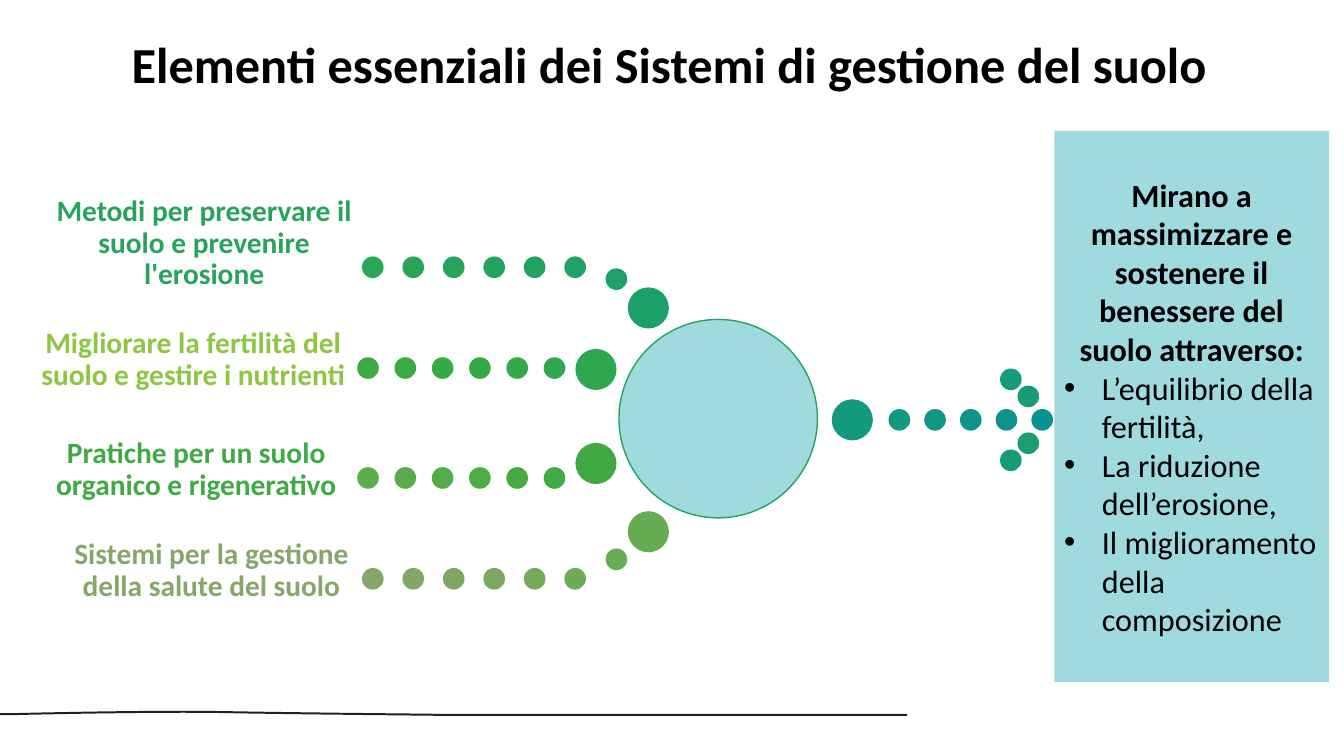
from pptx import Presentation
from pptx.dml.color import RGBColor
from pptx.enum.shapes import MSO_SHAPE
from pptx.enum.text import MSO_ANCHOR, MSO_AUTO_SIZE, PP_ALIGN
from pptx.oxml.ns import qn
from pptx.util import Cm, Pt
from lxml import etree

OVAL, RECT = MSO_SHAPE.OVAL, MSO_SHAPE.RECTANGLE
CENTER, LEFT = PP_ALIGN.CENTER, PP_ALIGN.LEFT
MIDDLE, BOTTOM = MSO_ANCHOR.MIDDLE, MSO_ANCHOR.BOTTOM
FIT_SHAPE = MSO_AUTO_SIZE.SHAPE_TO_FIT_TEXT

FONT = "Calibri"
BLACK, AQUA, GREEN, INK = "000000", "9FDADF", "26A45B", "231F20"
DOT, BIG = 0.51, 1.0

BRANCHES = [
    ((1.27, 6.48, 15.57, 0.51), 7.75, "Metodi per preservare il suolo e prevenire l'erosione",
     "26A45B", 1.02, 7.7, 0.78, 0.3,
     "2AA657 28A558 26A45B 24A35F 23A261 21A165 1EA168 1CA06A"),
    ((0.97, 9.02, 14.55, 0.51), 7.8, "Migliorare la fertilità del suolo e gestire i nutrienti",
     "8DC641", 0.94, 6.5, -0.21, None,
     "3DAA44 3BA946 37AA48 35A94A 33A84C 31A74F 2FA751"),
    ((1.35, 11.79, 14.17, 0.51), 7.19, "Pratiche per un suolo organico e rigenerativo",
     "3DAA44", 0.94, 6.5, -0.61, None,
     "5FAB4F 59AB4D 53AC49 4EAC46 47AB44 42AB43 3FAA44"),
    ((1.85, 14.33, 14.99, 0.51), 6.96, "Sistemi per la gestione della salute del suolo",
     "86A66B", 1.02, 7.7, -1.43, -0.49,
     "86A66B 81A767 7EA764 79A861 75AA5C 6EAB58 6AAB55 65AC52"),
]
ARROW_ROW = ["119881", "0F9685", "0E9588", "0D938B", "0A938E"]
ARROW_HEAD = [(4.24, -1.02, "139B7C"), (4.24, 1.02, "169B78"),
              (4.68, -0.59, "189C74"), (4.68, 0.59, "199D71")]
AIMS = ["L’equilibrio della fertilità,", "La riduzione dell’erosione,",
        "Il miglioramento della composizione"]


def rgb(value):
    return RGBColor.from_string(value)


def lengths(*values):
    return [Cm(v) for v in values]


def add_run(p, text, size, color, bold=False):
    r = p.add_run()
    r.text = text
    r.font.name = FONT
    r.font.size = Pt(size)
    r.font.bold = bold
    r.font.color.rgb = rgb(color)


def add_bullet(p):
    pPr = p._p.get_or_add_pPr()
    pPr.set("marL", str(Cm(0.95)))
    pPr.set("indent", str(Cm(-0.95)))
    color = etree.SubElement(pPr, qn("a:buClr"))
    etree.SubElement(color, qn("a:srgbClr")).set("val", BLACK)
    etree.SubElement(pPr, qn("a:buFont")).set("typeface", "Arial")
    etree.SubElement(pPr, qn("a:buChar")).set("char", "•")


def add_circle(s, x, y, d, fill, line=None):
    sp = s.shapes.add_shape(OVAL, *lengths(x, y, d, d))
    sp.shadow.inherit = False
    sp.fill.solid()
    sp.fill.fore_color.rgb = rgb(fill)
    sp.line.color.rgb = rgb(line or fill)
    sp.line.width = Pt(1)


def add_title(s, box):
    sp = s.shapes.add_textbox(*lengths(*box))
    tf = sp.text_frame
    tf.word_wrap = True
    tf.auto_size = FIT_SHAPE
    p = tf.paragraphs[0]
    p.alignment = CENTER
    add_run(p, "Elementi essenziali dei Sistemi di gestione del suolo", 36, BLACK, True)


def add_branch(s, box, label_w, label, color, pitch, reach, big_dy, bend_dy, shades):
    x, y, w, h = box
    right = x + w
    *small, last = shades.split()
    for i, shade in enumerate(small[:6]):
        add_circle(s, right - reach + i * pitch, y, h, shade)
    if bend_dy is not None:
        add_circle(s, right - 1.56, y + bend_dy, h, small[6])
    add_circle(s, right - BIG, y + big_dy, BIG, last)
    sp = s.shapes.add_textbox(*lengths(x, y - 0.38, label_w, 1.24))
    tf = sp.text_frame
    tf.word_wrap = True
    tf.vertical_anchor = BOTTOM
    tf.margin_left = tf.margin_right = tf.margin_top = tf.margin_bottom = 0
    p = tf.paragraphs[0]
    p.alignment = CENTER
    p.line_spacing = 0.9
    add_run(p, label, 21, color, True)


def add_dotted_arrow(s, box):
    x, y, w, h = box
    top = y + (h - DOT) / 2
    add_circle(s, x, y + (h - BIG) / 2, BIG, "12997E")
    for i, shade in enumerate(ARROW_ROW):
        add_circle(s, x + w - DOT - (len(ARROW_ROW) - 1 - i) * 0.9, top, DOT, shade)
    for dx, dy, shade in ARROW_HEAD:
        add_circle(s, x + dx, top + dy, DOT, shade)


def add_aims_panel(s, box):
    sp = s.shapes.add_shape(RECT, *lengths(*box))
    sp.shadow.inherit = False
    sp.fill.solid()
    sp.fill.fore_color.rgb = rgb(AQUA)
    sp.line.fill.background()
    tf = sp.text_frame
    tf.word_wrap = True
    tf.vertical_anchor = MIDDLE
    p = tf.paragraphs[0]
    p.alignment = CENTER
    add_run(p, "Mirano a massimizzare e sostenere il benessere del suolo attraverso:", 23, BLACK, True)
    for aim in AIMS:
        p = tf.add_paragraph()
        p.alignment = LEFT
        add_bullet(p)
        add_run(p, aim, 23, BLACK)


def bezier(a, b, c, d, steps=16):
    for i in range(1, steps + 1):
        t = i / steps
        u = 1 - t
        yield tuple(u**3 * k + 3 * u * u * t * m + 3 * u * t * t * n + t**3 * q
                    for k, m, n, q in zip(a, b, c, d))


def add_footer_wave(s, box):
    x, y, w, h = box
    thick = 0.05
    base = h - thick
    start, crest, flat = (0.36, 0.06), (5.66, 0.01), (11.25, base)
    curve = [(0, 0.06), start]
    curve += bezier(start, (1.32, 0.04), (3.94, -0.02), crest)
    curve += bezier(crest, (7.14, 0.04), (11.2, base), flat)
    curve.append((w, base))
    outline = curve + [(px, py + thick) for px, py in reversed(curve)]
    points = [(Cm(x + px), Cm(y + py)) for px, py in outline]
    builder = s.shapes.build_freeform(*points[0])
    builder.add_line_segments(points[1:], close=True)
    sp = builder.convert_to_shape()
    sp.shadow.inherit = False
    sp.fill.solid()
    sp.fill.fore_color.rgb = rgb(INK)
    sp.line.fill.background()


def main():
    prs = Presentation()
    prs.slide_width, prs.slide_height = Cm(33.87), Cm(19.05)
    s = prs.slides.add_slide(prs.slide_layouts[6])
    add_footer_wave(s, (0, 17.91, 22.86, 0.13))
    add_dotted_arrow(s, (20.98, 9.3, 5.54, 2.56))
    add_circle(s, 15.6, 8.05, 5, AQUA, GREEN)
    for branch in BRANCHES:
        add_branch(s, *branch)
    add_aims_panel(s, (26.57, 3.3, 6.93, 13.89))
    add_title(s, (1.85, 0.71, 30.05, 1.8))
    prs.save("out.pptx")


if __name__ == "__main__":
    main()
